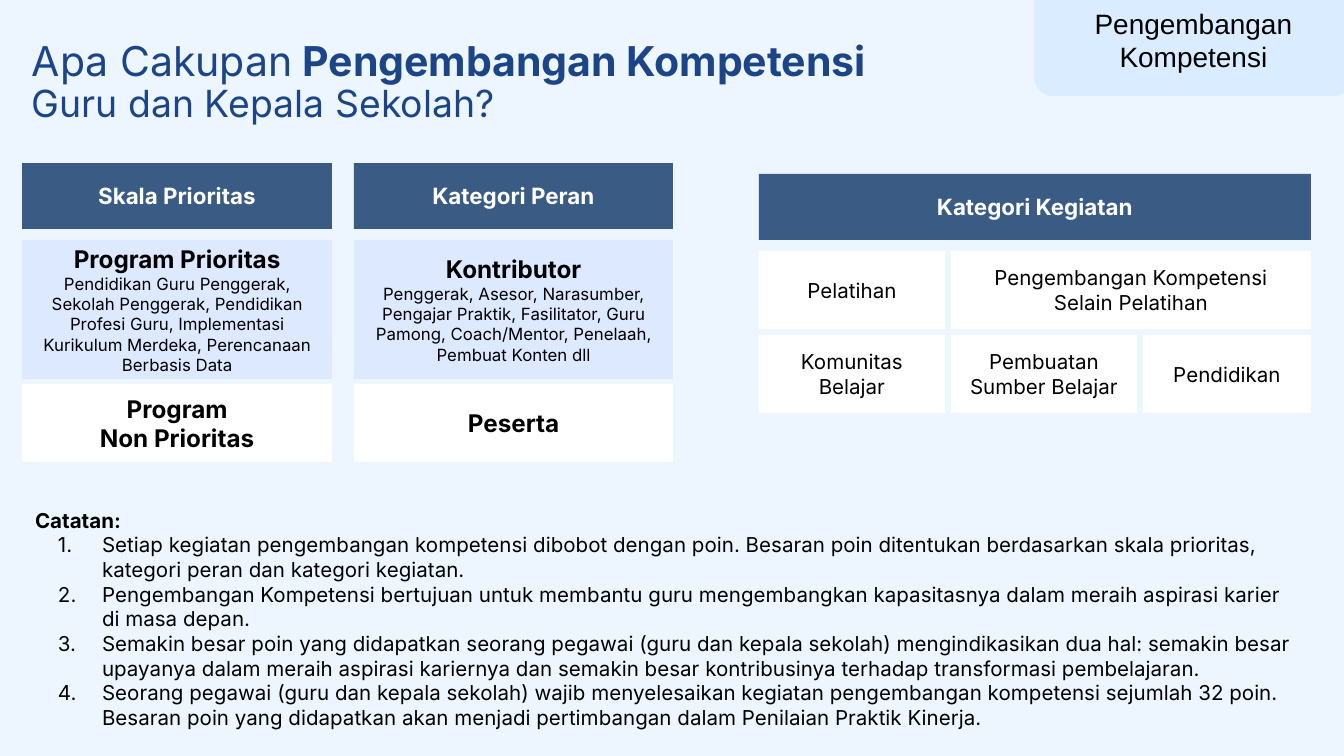
from lxml import etree
from pptx import Presentation
from pptx.dml.color import RGBColor
from pptx.enum.shapes import MSO_SHAPE
from pptx.enum.text import MSO_ANCHOR, PP_ALIGN
from pptx.oxml.ns import qn
from pptx.util import Pt

RECTANGLE, ROUNDED = MSO_SHAPE.RECTANGLE, MSO_SHAPE.ROUNDED_RECTANGLE
MIDDLE = MSO_ANCHOR.MIDDLE
LEFT, CENTER = PP_ALIGN.LEFT, PP_ALIGN.CENTER

BACKGROUND = RGBColor(0xED, 0xF6, 0xFF)
TITLE_BLUE = RGBColor(0x1C, 0x45, 0x87)
HEADER_BLUE = RGBColor(0x3A, 0x5C, 0x84)
PALE_BLUE = RGBColor(0xDD, 0xE9, 0xFF)
TAB_BLUE = RGBColor(0xDA, 0xEC, 0xFF)
WHITE = RGBColor(0xFF, 0xFF, 0xFF)
BLACK = RGBColor(0x00, 0x00, 0x00)

EMU_PER_PX = 914400 / 134.4
SLIDE_WIDTH, SLIDE_HEIGHT = 1344, 756

# Paragraphs are lists of runs; a run is (text, size in points, bold).
TITLE = [
    [("Apa Cakupan", 22, False), (" Pengembangan Kompetensi", 22, True)],
    [("Guru dan Kepala Sekolah?", 20, False)],
]
TAB = [[("Pengembangan Kompetensi", 15, False)]]

# Each column: left, width, header, highlighted (name, detail), plain lines.
COLUMNS = [
    (22, 310, "Skala Prioritas",
     ("Program Prioritas",
      "Pendidikan Guru Penggerak, Sekolah Penggerak, Pendidikan Profesi Guru, "
      "Implementasi Kurikulum Merdeka, Perencanaan Berbasis Data"),
     ["Program", "Non Prioritas"]),
    (354, 319, "Kategori Peran",
     ("Kontributor",
      "Penggerak, Asesor, Narasumber, Pengajar Praktik, Fasilitator, Guru Pamong, "
      "Coach/Mentor, Penelaah, Pembuat Konten dll"),
     ["Peserta"]),
]
COLUMN_TOP, DETAIL_TOP, PLAIN_TOP = 163, 240, 384
HEADER_HEIGHT, DETAIL_HEIGHT, CELL_HEIGHT = 66, 139, 78

ACTIVITY_HEADER = "Kategori Kegiatan"
# Each cell: lines of text, number of grid columns it spans.
ACTIVITY_ROWS = [
    [(["Pelatihan"], 1), (["Pengembangan Kompetensi", "Selain Pelatihan"], 2)],
    [(["Komunitas Belajar"], 1), (["Pembuatan Sumber Belajar"], 1), (["Pendidikan"], 1)],
]
ACTIVITY_LEFT, ACTIVITY_TOP, ACTIVITY_GRID_TOP = 759, 174, 251
ACTIVITY_WIDTHS = [186, 186, 168]
GAP = 6

NOTES_HEADING = "Catatan:"
NOTES = [
    "Setiap kegiatan pengembangan kompetensi dibobot dengan poin. Besaran poin "
    "ditentukan berdasarkan skala prioritas, kategori peran dan kategori kegiatan.",
    "Pengembangan Kompetensi bertujuan untuk membantu guru mengembangkan "
    "kapasitasnya dalam meraih aspirasi karier di masa depan.",
    "Semakin besar poin yang didapatkan seorang pegawai (guru dan kepala sekolah) "
    "mengindikasikan dua hal: semakin besar upayanya dalam meraih aspirasi kariernya "
    "dan semakin besar kontribusinya terhadap transformasi pembelajaran.",
    "Seorang pegawai (guru dan kepala sekolah) wajib menyelesaikan kegiatan "
    "pengembangan kompetensi sejumlah 32 poin. Besaran poin yang didapatkan akan "
    "menjadi pertimbangan dalam Penilaian Praktik Kinerja.",
]


def px(length):
    return round(length * EMU_PER_PX)


def plain_paragraphs(lines, size, bold=False):
    return [[(line, size, bold)] for line in lines]


def write_text(shape, paragraphs, color, align, font="Inter", insets=(13, 13), spacing=None):
    """Fill a shape with runs; insets are (horizontal, vertical) in px."""
    frame = shape.text_frame
    frame.word_wrap = True
    frame.vertical_anchor = MIDDLE
    frame.margin_left = frame.margin_right = px(insets[0])
    frame.margin_top = frame.margin_bottom = px(insets[1])
    for index, runs in enumerate(paragraphs):
        paragraph = frame.add_paragraph() if index else frame.paragraphs[0]
        paragraph.alignment = align
        if spacing:
            paragraph.line_spacing = spacing
        for text, size, bold in runs:
            run = paragraph.add_run()
            run.text = text
            run.font.name = font
            run.font.size = Pt(size)
            run.font.bold = bold
            run.font.color.rgb = color


def add_box(slide, bounds, fill, paragraphs, color=BLACK, kind=RECTANGLE, font="Inter"):
    shape = slide.shapes.add_shape(kind, *map(px, bounds))
    shape.shadow.inherit = False
    shape.fill.solid()
    shape.fill.fore_color.rgb = fill
    shape.line.fill.background()
    write_text(shape, paragraphs, color, CENTER, font)
    return shape


def add_header(slide, left, top, width, text):
    add_box(slide, (left, top, width, HEADER_HEIGHT), HEADER_BLUE,
            plain_paragraphs([text], 12, True), WHITE)


def add_columns(slide):
    for left, width, header, (name, detail), lines in COLUMNS:
        add_header(slide, left, COLUMN_TOP, width, header)
        add_box(slide, (left, DETAIL_TOP, width, DETAIL_HEIGHT), PALE_BLUE,
                [[(name, 13, True)], [(detail, 9, False)]])
        add_box(slide, (left, PLAIN_TOP, width, CELL_HEIGHT), WHITE,
                plain_paragraphs(lines, 13, True))


def add_activities(slide):
    total_width = sum(ACTIVITY_WIDTHS) + GAP * (len(ACTIVITY_WIDTHS) - 1)
    add_header(slide, ACTIVITY_LEFT, ACTIVITY_TOP, total_width, ACTIVITY_HEADER)
    for row, cells in enumerate(ACTIVITY_ROWS):
        top = ACTIVITY_GRID_TOP + row * (CELL_HEIGHT + GAP)
        left, column = ACTIVITY_LEFT, 0
        for lines, span in cells:
            width = sum(ACTIVITY_WIDTHS[column:column + span]) + GAP * (span - 1)
            add_box(slide, (left, top, width, CELL_HEIGHT), WHITE,
                    plain_paragraphs(lines, 11))
            left += width + GAP
            column += span


def number_paragraph(paragraph):
    properties = paragraph._p.get_or_add_pPr()
    properties.set("marL", str(px(67)))
    properties.set("indent", str(px(-44)))
    color = etree.SubElement(properties, qn("a:buClr"))
    etree.SubElement(color, qn("a:srgbClr"), val=str(BLACK))
    etree.SubElement(properties, qn("a:buFont"), typeface="Inter")
    etree.SubElement(properties, qn("a:buAutoNum"), type="arabicPeriod")


def add_notes(slide):
    box = slide.shapes.add_textbox(*map(px, (22, 499, 1289, 239)))
    paragraphs = [[(NOTES_HEADING, 11, True)]] + plain_paragraphs(NOTES, 11)
    write_text(box, paragraphs, BLACK, LEFT)
    for paragraph in box.text_frame.paragraphs[1:]:
        number_paragraph(paragraph)


def main():
    presentation = Presentation()
    presentation.slide_width = px(SLIDE_WIDTH)
    presentation.slide_height = px(SLIDE_HEIGHT)
    slide = presentation.slides.add_slide(presentation.slide_layouts[6])
    slide.background.fill.solid()
    slide.background.fill.fore_color.rgb = BACKGROUND

    title = slide.shapes.add_textbox(*map(px, (22, 27, 1024, 112)))
    write_text(title, TITLE, TITLE_BLUE, LEFT, insets=(10, 5), spacing=0.9)
    add_columns(slide)
    add_activities(slide)
    add_notes(slide)
    tab = add_box(slide, (1034, -16, 319, 112), TAB_BLUE, TAB, kind=ROUNDED, font="Arial")
    tab.adjustments[0] = 0.17

    presentation.save("out.pptx")


if __name__ == "__main__":
    main()
